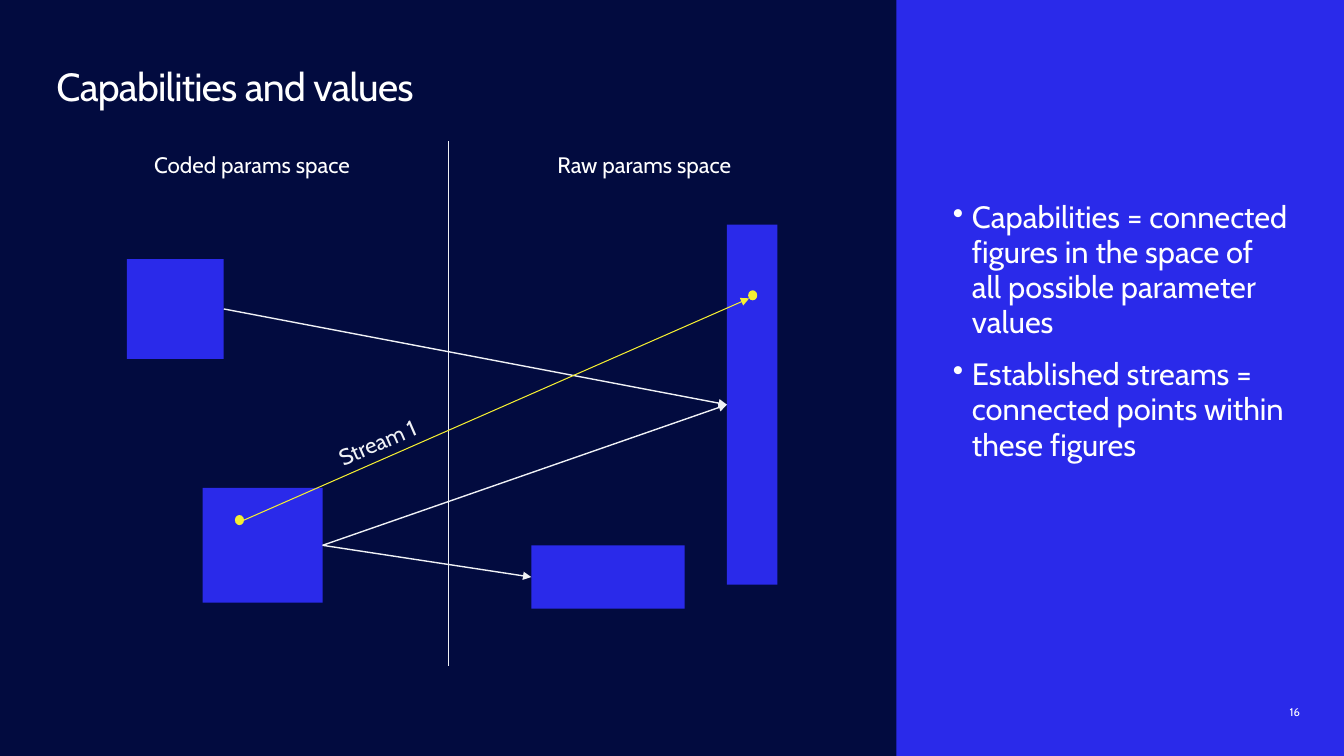
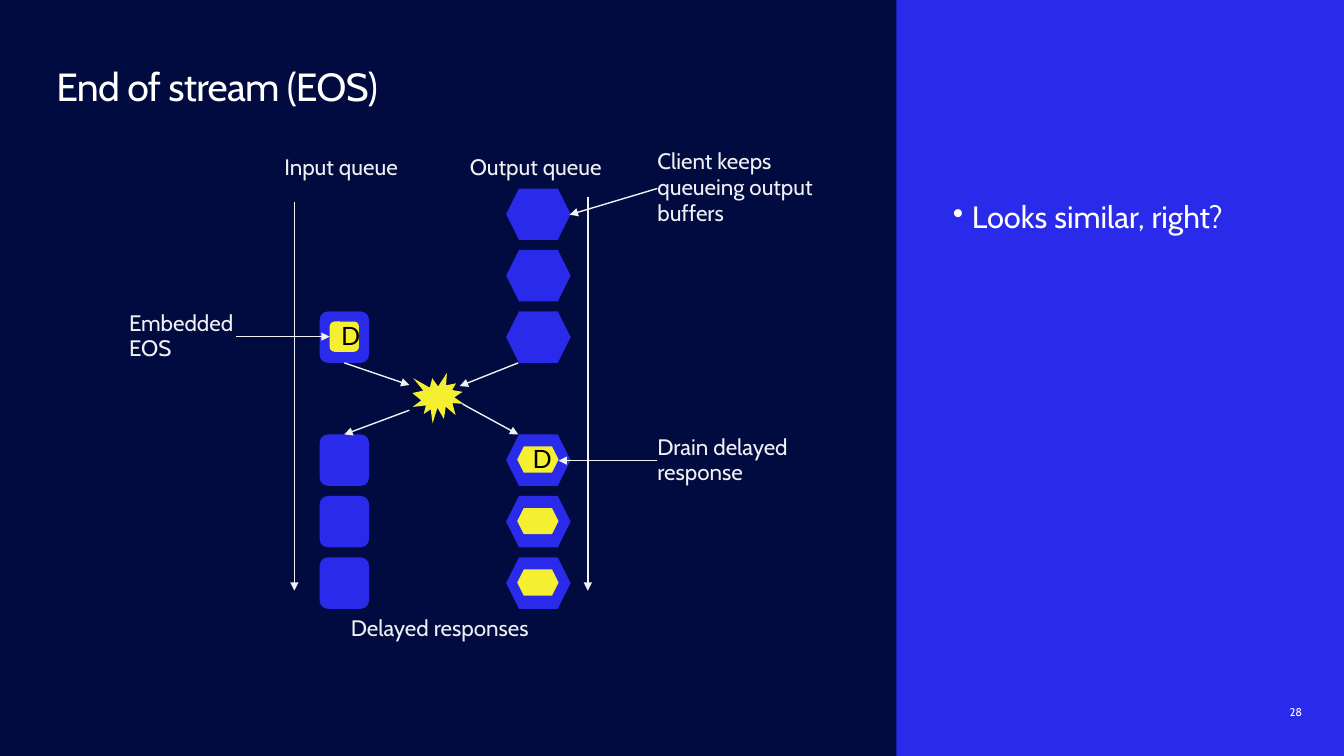
from lxml.etree import SubElement
from pptx import Presentation
from pptx.dml.color import RGBColor
from pptx.enum.shapes import MSO_CONNECTOR, MSO_SHAPE
from pptx.enum.text import MSO_ANCHOR, PP_ALIGN
from pptx.oxml.ns import qn
from pptx.util import Inches, Pt

TOP, LEFT, BOTTOM, RIGHT = range(4)


class Deck:
    """Hold the shared style and the current slide, and draw each kind of element."""

    colors = {
        "navy": "020B3F",
        "blue": "2A2AEA",
        "yellow": "F5EF32",
        "white": "FFFFFF",
        "pale": "EFF1F5",
        "black": "000000",
    }
    face = "Cabin"

    def __init__(self):
        self.prs = Presentation()
        self.prs.slide_width = Inches(13.33)
        self.prs.slide_height = Inches(7.5)
        self.paint(self.prs.slide_master.background.fill, "navy")

    def tint(self, name):
        return RGBColor.from_string(self.colors[name])

    def paint(self, fill, name):
        fill.solid()
        fill.fore_color.rgb = self.tint(name)

    def start(self, title, number, points):
        self.slide = self.prs.slides.add_slide(self.prs.slide_layouts[6])
        self.shape(MSO_SHAPE.RECTANGLE, 8.89, 0, 4.44, 7.5)
        page = self.text(12.79, 6.97, 0.39, 0.16, [number], 8, "white", gap=1.25)
        page.text_frame.vertical_anchor = MSO_ANCHOR.BOTTOM
        head = self.text(0.56, 0.69, 7.76, 0.71, [title], 28, "white", gap=0.85, wrap=True)
        run = head.text_frame.paragraphs[0].runs[0]
        run._r.get_or_add_rPr().set("spc", "-50")
        self.text(9.45, 1.99, 3.32, 4.75, points, 22, "white", gap=0.95, wrap=True, bullet=True)

    def typeset(self, frame, lines, size, color, face=None, gap=0.96, align=PP_ALIGN.LEFT, bullet=False):
        for i, line in enumerate(lines):
            para = frame.add_paragraph() if i else frame.paragraphs[0]
            para.text = line
            para.alignment = align
            para.line_spacing = gap
            if bullet:
                para.space_before = Pt(9 if i else 0)
                para.space_after = Pt(3)
                props = para._p.get_or_add_pPr()
                props.set("marL", str(Inches(0.19)))
                props.set("indent", str(-Inches(0.19)))
                SubElement(props, qn("a:buChar")).set("char", "•")
            para.font.name = face or self.face
            para.font.size = Pt(size)
            para.font.color.rgb = self.tint(color)

    def text(self, x, y, w, h, lines, size=16, color="pale", wrap=False, turn=0, **style):
        box = self.slide.shapes.add_textbox(Inches(x), Inches(y), Inches(w), Inches(h))
        box.rotation = turn
        frame = box.text_frame
        frame.word_wrap = wrap
        frame.margin_left = frame.margin_right = frame.margin_top = frame.margin_bottom = 0
        self.typeset(frame, lines, size, color, **style)
        return box

    def shape(self, kind, x, y, w, h, color="blue", label=None):
        item = self.slide.shapes.add_shape(kind, Inches(x), Inches(y), Inches(w), Inches(h))
        item.shadow.inherit = False
        self.paint(item.fill, color)
        item.line.fill.background()
        if label:
            item.text_frame.vertical_anchor = MSO_ANCHOR.MIDDLE
            self.typeset(item.text_frame, [label], 18, "black", face="Lato", align=PP_ALIGN.CENTER)
        return item

    def line(self, start, end, color="pale", width=1, arrow=True):
        loose = [isinstance(spot[0], (int, float)) for spot in (start, end)]
        (x1, y1), (x2, y2) = [spot if free else (0, 0) for spot, free in zip((start, end), loose)]
        link = self.slide.shapes.add_connector(
            MSO_CONNECTOR.STRAIGHT, Inches(x1), Inches(y1), Inches(x2), Inches(y2))
        if not loose[0]:
            link.begin_connect(*start)
        if not loose[1]:
            link.end_connect(*end)
        link.line.color.rgb = self.tint(color)
        link.line.width = Pt(width)
        if arrow:
            SubElement(link.line._get_or_add_ln(), qn("a:tailEnd")).set("type", "triangle")
        SubElement(link._element.spPr, qn("a:effectLst"))


def values(deck):
    deck.start("Capabilities and values", "16", [
        "Capabilities = connected figures in the space of all possible parameter values",
        "Established streams = connected points within these figures",
    ])
    for x, name in ((0.56, "Coded params space"), (4.45, "Raw params space")):
        deck.text(x, 1.52, 3.88, 0.26, [name], color="white", wrap=True,
                  gap=0.95, align=PP_ALIGN.CENTER)
    deck.line((4.45, 1.4), (4.45, 6.61), arrow=False)
    upper, lower, tall, wide = [deck.shape(MSO_SHAPE.RECTANGLE, *box) for box in (
        (1.26, 2.57, 0.96, 0.99),
        (2.01, 4.84, 1.19, 1.14),
        (7.21, 2.23, 0.5, 3.57),
        (5.27, 5.41, 1.52, 0.63),
    )]
    for source, target in ((lower, tall), (upper, tall), (lower, wide)):
        deck.line((source, RIGHT), (target, LEFT))
    for x, y in ((7.42, 2.88), (2.33, 5.11)):
        deck.shape(MSO_SHAPE.OVAL, x, y, 0.09, 0.1, "yellow")
    deck.line((2.42, 5.16), (7.43, 2.96), "yellow", 0.75)
    deck.text(3.34, 4.26, 0.86, 0.26, ["Stream 1"], turn=336.5)


def ending(deck):
    deck.start("End of stream (EOS)", "28", ["Looks similar, right?"])
    rows = [1.87 + 0.61 * i for i in range(7)]
    inputs = {i: deck.shape(MSO_SHAPE.ROUNDED_RECTANGLE, 3.17, rows[i], 0.49, 0.51)
              for i in (2, 4, 5, 6)}
    token = deck.shape(MSO_SHAPE.ROUNDED_RECTANGLE, 3.27, rows[2] + 0.1, 0.29, 0.3, "yellow", "D")
    for i in (0, 1, 2, 4, 5, 6):
        deck.shape(MSO_SHAPE.HEXAGON, 5.02, rows[i], 0.64, 0.51)
        if i > 3:
            deck.shape(MSO_SHAPE.HEXAGON, 5.13, rows[i] + 0.12, 0.41, 0.26, "yellow",
                       "D" if i == 4 else None)
    deck.shape(MSO_SHAPE.EXPLOSION1, 4.09, rows[3], 0.51, 0.5, "yellow")

    mark, client, drain, *_ = [deck.text(*note) for note in (
        (1.28, 3.08, 1.06, 0.52, ["Embedded", "EOS"]),
        (6.52, 1.48, 1.59, 0.78, ["Client keeps", "queueing output", "buffers"]),
        (6.52, 4.31, 1.33, 0.52, ["Drain delayed", "response"]),
        (2.82, 1.54, 1.17, 0.26, ["Input queue"]),
        (4.66, 1.54, 1.35, 0.26, ["Output queue"]),
        (3.48, 6.11, 1.85, 0.26, ["Delayed responses"]),
    )]
    for start, end in (
        ((2.92, 2), (2.92, 5.86)),
        ((5.83, 1.95), (5.83, 5.86)),
        ((inputs[2], BOTTOM), (4.06, 3.82)),
        ((4.06, 4.07), (inputs[4], TOP)),
        ((4.59, 4.01), (5.14, 4.31)),
        ((5.14, 3.6), (4.56, 3.83)),
        ((client, LEFT), (5.65, 2.13)),
        ((mark, RIGHT), (token, LEFT)),
        ((drain, LEFT), (5.54, 4.57)),
    ):
        deck.line(start, end)


def main():
    deck = Deck()
    values(deck)
    ending(deck)
    deck.prs.save("out.pptx")


if __name__ == "__main__":
    main()
